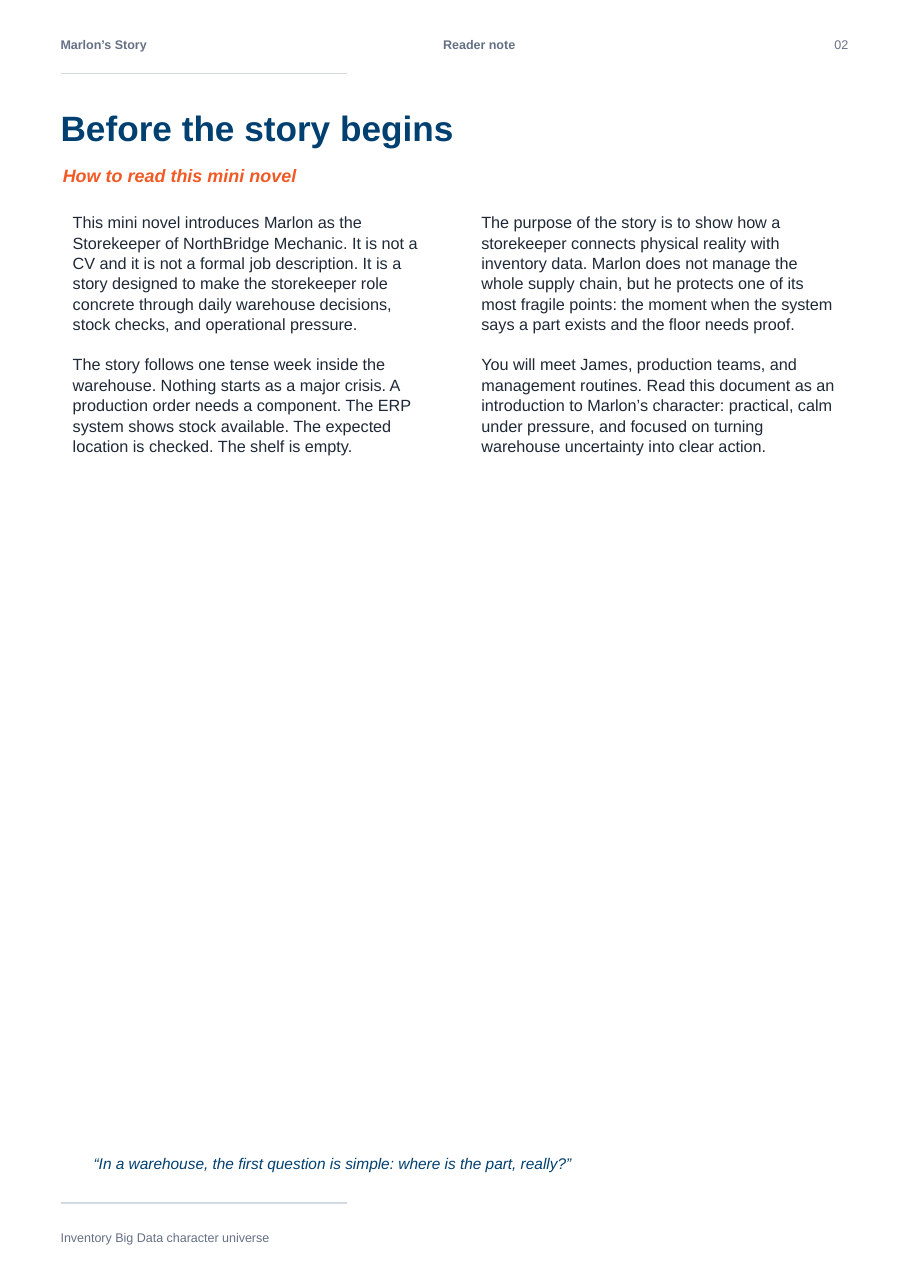
from pptx import Presentation
from pptx.dml.color import RGBColor
from pptx.enum.shapes import MSO_CONNECTOR as Connector
from pptx.enum.text import MSO_ANCHOR as Anchor, MSO_AUTO_SIZE as AutoSize, PP_ALIGN as Align
from pptx.oxml.ns import qn
from pptx.util import Inches, Pt
from lxml.etree import SubElement

PAGE_WIDTH, PAGE_HEIGHT = Inches(8.27), Inches(11.69)
NAVY, ORANGE, GREY, INK, RULE = "004070", "F15A24", "667085", "1F2937", "D3DAE3"
MARGIN = 6.65
SMALL_ROW = 1.54
COLUMN_LEFT, COLUMN_STEP = 7.74, 44.86

STORY_COLUMNS = [
    [
        "This mini novel introduces Marlon as the Storekeeper of NorthBridge Mechanic. "
        "It is not a CV and it is not a formal job description. It is a story designed to make "
        "the storekeeper role concrete through daily warehouse decisions, stock checks, "
        "and operational pressure.",
        "The story follows one tense week inside the warehouse. Nothing starts as a major crisis. "
        "A production order needs a component. The ERP system shows stock available. "
        "The expected location is checked. The shelf is empty.",
    ],
    [
        "The purpose of the story is to show how a storekeeper connects physical reality with "
        "inventory data. Marlon does not manage the whole supply chain, but he protects one of its "
        "most fragile points: the moment when the system says a part exists and the floor needs proof.",
        "You will meet James, production teams, and management routines. Read this document as an "
        "introduction to Marlon’s character: practical, calm under pressure, and focused on turning "
        "warehouse uncertainty into clear action.",
    ],
]


def color(hex_code):
    """Turn a hex string into a colour."""
    return RGBColor.from_string(hex_code)


def across(percent):
    """Measure a share of the page width."""
    return round(PAGE_WIDTH * percent / 100)


def down(percent):
    """Measure a share of the page height."""
    return round(PAGE_HEIGHT * percent / 100)


def place(shape, left, top, width, height):
    """Put a shape on the page by percentages."""
    shape.left, shape.top = across(left), down(top)
    shape.width, shape.height = across(width), down(height)


def write(shape, paragraphs, size, ink, bold=False, italic=False, align=Align.LEFT,
          anchor=Anchor.MIDDLE, side_inset=0, line_spacing=1.0, gap=0):
    """Fill a shape with evenly styled paragraphs."""
    frame = shape.text_frame
    frame.word_wrap, frame.auto_size = True, AutoSize.NONE
    frame.vertical_anchor = anchor
    frame.margin_left = frame.margin_right = Inches(side_inset)
    frame.margin_top = frame.margin_bottom = 0
    for index, text in enumerate(paragraphs):
        paragraph = frame.add_paragraph() if index else frame.paragraphs[0]
        paragraph.alignment = align
        paragraph.line_spacing = line_spacing
        paragraph.space_before = Pt(gap if index else 0)
        run = paragraph.add_run()
        run.text = text
        font = run.font
        font.name, font.size = "Arial", Pt(size)
        font.bold, font.italic = bold, italic
        font.color.rgb = color(ink)


def add_text(slide, box, paragraphs, size, ink, **style):
    """Add a text box."""
    shape = slide.shapes.add_textbox(0, 0, 0, 0)
    place(shape, *box)
    write(shape, paragraphs, size, ink, **style)


def add_title(slide, box, text):
    """Place and format the title."""
    place(slide.shapes.title, *box)
    write(slide.shapes.title, [text], 23, NAVY, bold=True)


def add_rule(slide, top):
    """Draw a short horizontal rule from the margin."""
    rule = slide.shapes.add_connector(
        Connector.STRAIGHT, across(MARGIN), down(top), across(38.09), down(top))
    rule.line.color.rgb = color(RULE)
    rule.line.width = Pt(0.8)
    SubElement(rule._element.spPr, qn("a:effectLst"))


def add_small_text(slide, left, top, width, text, **style):
    """Add a line of header or footer text."""
    add_text(slide, (left, top, width, SMALL_ROW), [text], 8.2, GREY, **style)


def main():
    """Build the reader note page."""
    presentation = Presentation()
    presentation.slide_width, presentation.slide_height = PAGE_WIDTH, PAGE_HEIGHT
    slide = presentation.slides.add_slide(presentation.slide_layouts[5])
    slide.background.fill.solid()
    slide.background.fill.fore_color.rgb = color("FFFFFF")

    add_small_text(slide, MARGIN, 2.65, 22.97, "Marlon’s Story", bold=True)
    add_small_text(slide, 35.67, 2.65, 33.86, "Reader note", bold=True, align=Align.CENTER)
    add_small_text(slide, 87.67, 2.65, 5.44, "02", align=Align.RIGHT)
    for top in (5.73, 93.41):
        add_rule(slide, top)
    add_small_text(slide, MARGIN, 95.3, 36.28, "Inventory Big Data character universe")

    add_title(slide, (MARGIN, 8.13, 86.46, 3.59), "Before the story begins")
    add_text(slide, (6.89, 12.57, 84.64, 2.05), ["How to read this mini novel"],
             11.7, ORANGE, bold=True, italic=True)
    for index, paragraphs in enumerate(STORY_COLUMNS):
        add_text(slide, (COLUMN_LEFT + index * COLUMN_STEP, 16.42, 39.66, 69.29), paragraphs,
                 10.6, INK, anchor=Anchor.TOP, side_inset=0.02, line_spacing=1.05, gap=12.8)
    add_text(slide, (10.28, 88.62, 80.41, 3.42),
             ["“In a warehouse, the first question is simple: where is the part, really?”"],
             10.1, NAVY, italic=True)
    presentation.save("out.pptx")


if __name__ == "__main__":
    main()
